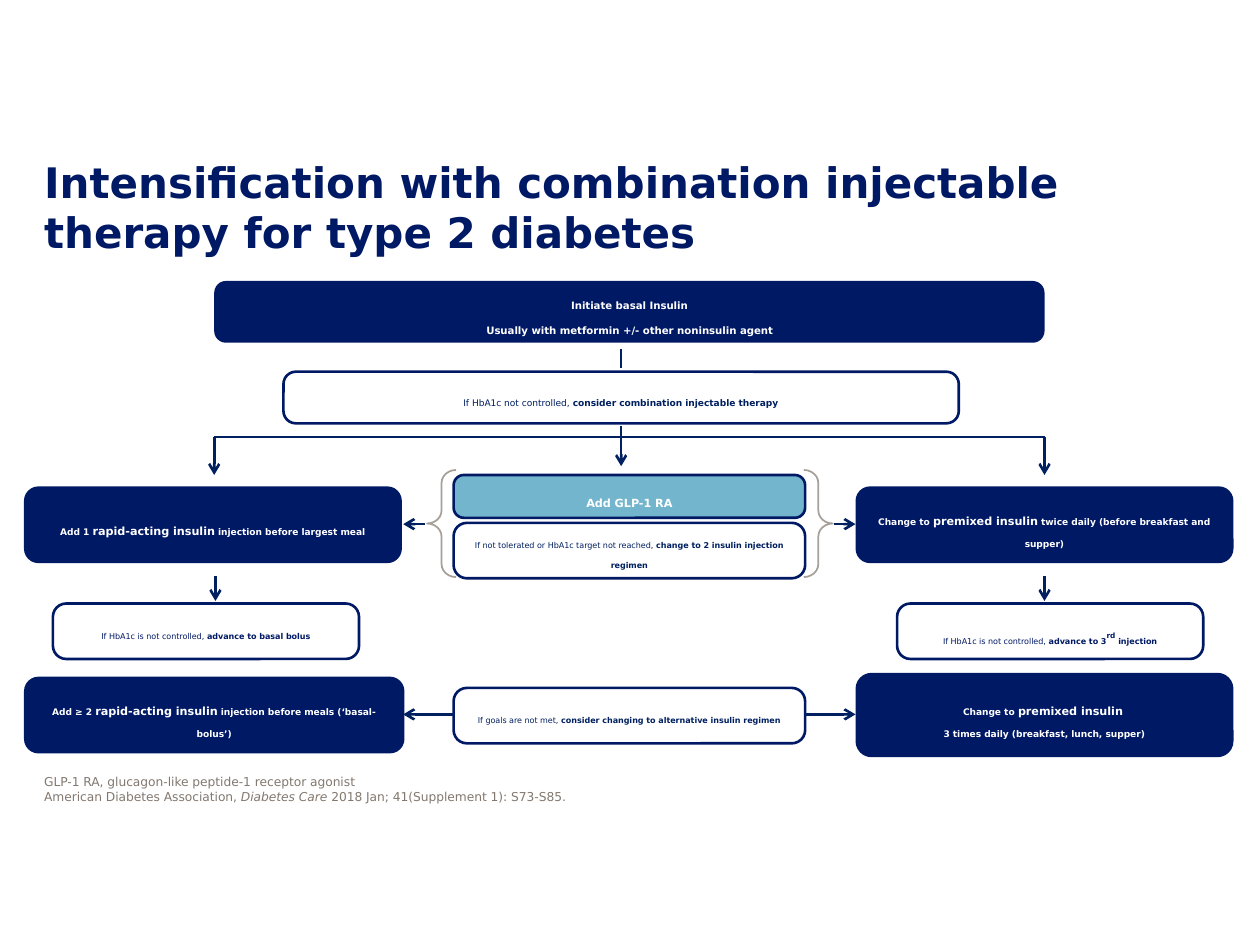
import collections

import pptx
import pptx.util
import pptx.dml.color
import pptx.enum.shapes
import pptx.enum.text
import pptx.oxml.ns
import pptx.oxml.xmlchemy

RGBColor = pptx.dml.color.RGBColor
Shapes = pptx.enum.shapes.MSO_SHAPE
Anchor = pptx.enum.text.MSO_ANCHOR
Align = pptx.enum.text.PP_ALIGN

NAVY = RGBColor(0x00, 0x19, 0x65)
INK = RGBColor(0x00, 0x20, 0x60)
TEAL = RGBColor(0x72, 0xB5, 0xCC)
STONE = RGBColor(0x82, 0x78, 0x6F)
WHITE = RGBColor(0xFF, 0xFF, 0xFF)

FONT = "DejaVu Sans"
NOTE, STEP, HEAD, KEY = 4.6, 5.2, 5.8, 6.4  # text sizes in points
COLUMNS, ROWS = 100, 75
CELL = pptx.util.Inches(10) // COLUMNS

# Left, top, width and height in grid cells
Box = collections.namedtuple("Box", "left top width height")


def cells(count):
    return round(count * CELL)


def place(box):
    return [cells(length) for length in box]


def inside(region, left, top, width, height):
    """Box whose left and top are counted from the region's corner."""
    return Box(region.left + left, region.top + top, width, height)


def add_xml(parent, tag, **attributes):
    child = pptx.oxml.xmlchemy.OxmlElement(tag)
    for name, value in attributes.items():
        child.set(name, value)
    parent.append(child)
    return child


def add_span(para, text, size=STEP, color=INK, bold=False, italic=False, raised=None):
    span = para.add_run()
    span.text = text
    font = span.font
    font.name, font.size, font.bold, font.italic = FONT, pptx.util.Pt(size), bold, italic
    font.color.rgb = color
    if raised:
        span._r.get_or_add_rPr().set("baseline", str(raised * 1000))


def fill_frame(shape, paragraphs, anchor, inset=(0, 0), align=Align.LEFT, spacing=1.0, color=INK):
    """Write paragraphs, each a list of (text, format) spans."""
    frame = shape.text_frame
    frame.word_wrap = True
    frame.vertical_anchor = anchor
    frame.margin_left = frame.margin_right = cells(inset[0])
    frame.margin_top = frame.margin_bottom = cells(inset[1])
    for index, spans in enumerate(paragraphs):
        para = frame.add_paragraph() if index else frame.paragraphs[0]
        para.alignment, para.line_spacing = align, spacing
        for text, style in spans:
            if text == "\v":
                para.add_line_break()
            else:
                add_span(para, text, **{"color": color, **style})


def add_panel(page, box, paragraphs, fill=WHITE, outlined=True, color=INK):
    panel = page.shapes.add_shape(Shapes.ROUNDED_RECTANGLE, *place(box))
    panel.shadow.inherit = False
    panel.adjustments[0] = 0.24 if outlined else 0.19
    panel.fill.solid()
    panel.fill.fore_color.rgb = fill
    if outlined:
        panel.line.color.rgb = NAVY
        panel.line.width = pptx.util.Pt(1.5)
    else:
        panel.line.fill.background()
    fill_frame(panel, paragraphs, Anchor.MIDDLE, (1, 0.5), Align.CENTER, 2.0, color)


def add_step(page, box, paragraphs):
    add_panel(page, box, paragraphs, NAVY, False, WHITE)


def add_note(page, box, plain, *strong, size=NOTE, color=INK):
    spans = [(plain, {"size": size})] + [(text, {"size": size, "bold": True, **style}) for text, style in strong]
    add_panel(page, box, [spans], color=color)


def treatment(before, name, after):
    """Spans of a step that sets the treatment's name larger."""
    return [(before, {"bold": True}), (name, {"size": KEY, "bold": True}), (after, {"bold": True})]


def add_line(page, start, end, arrow=True):
    ends = [cells(length) for length in (*start, *end)]
    line = page.shapes.add_connector(pptx.enum.shapes.MSO_CONNECTOR.STRAIGHT, *ends)
    line.line.color.rgb = INK
    line.line.width = pptx.util.Pt(1.5)
    if arrow:
        add_xml(line.line._get_or_add_ln(), "a:tailEnd", type="arrow")
    add_xml(line._element.spPr, "a:effectLst")


def add_brace(page, box, flipped):
    brace = page.shapes.add_shape(Shapes.RIGHT_BRACE, *place(box))
    brace.shadow.inherit = False
    brace.adjustments[0], brace.adjustments[1] = 0.45, 0.5
    brace.fill.background()
    brace.line.color.rgb = STONE
    brace.line.width = pptx.util.Pt(1)
    color = brace._element.spPr.find(".//" + pptx.oxml.ns.qn("a:srgbClr"))
    add_xml(color, "a:alpha", val="70000")
    if flipped:
        brace._element.spPr.xfrm.set("flipH", "1")


def add_text_box(page, box, spans, anchor):
    fill_frame(page.shapes.add_textbox(*place(box)), [spans], anchor)


def draw_title(page, box):
    text = "Intensification with combination injectable therapy for type 2 diabetes"
    add_text_box(page, box, [(text, {"size": 24, "bold": True, "color": NAVY})], Anchor.TOP)


def draw_references(page, box):
    style = {"size": 7, "color": STONE}
    add_text_box(page, box, [
        ("GLP-1 RA, glucagon-like peptide-1 receptor agonist", style),
        ("\v", {}),
        ("American Diabetes Association, ", style),
        ("Diabetes Care ", {**style, "italic": True}),
        ("2018 Jan; 41(Supplement 1): S73-S85.", style),
    ], Anchor.BOTTOM)


def draw_start(page, box):
    """First treatment, its condition and the fork into three options."""
    strong = {"size": HEAD, "bold": True}
    add_step(page, inside(box, 0, 0, box.width, 4.9), [
        [("Initiate basal Insulin", strong)],
        [("Usually with metformin +/- other noninsulin agent", strong)],
    ])
    add_note(page, inside(box, 5.5, 7.2, 53.6, 4.1), "If HbA1c not controlled, ",
             ("consider combination injectable therapy", {}), size=STEP)
    middle, fork, right = box.left + 32.3, box.top + 12.4, box.left + box.width
    add_line(page, (middle, box.top + 5.4), (middle, box.top + 6.9), arrow=False)
    add_line(page, (middle, box.top + 11.5), (middle, box.top + 14.7))
    add_line(page, (box.left, fork), (right, fork), arrow=False)
    for side in (box.left, right):
        add_line(page, (side, fork), (side, fork + 3))


def draw_branch(page, box, arrow_at, first, note_left, note, last_box, last):
    """Column of a step, a condition and the step that follows."""
    add_step(page, inside(box, 0, 0, box.width, 6.1), first)
    x = box.left + arrow_at
    add_line(page, (x, box.top + 7.1), (x, box.top + 9.1))
    add_note(page, inside(box, note_left, 9.3, 24.3, 4.4), *note, color=NAVY)
    add_step(page, inside(box, *last_box), last)


def draw_middle(page, box):
    """Central option in braces, with arrows to both branches."""
    reach = 2.1
    for left, flipped in ((-reach, True), (box.width - 0.1, False)):
        add_brace(page, inside(box, left, -0.4, 2.3, 8.5), flipped)
    add_panel(page, inside(box, 0, 0, box.width, 3.4),
              [[("Add GLP-1 RA", {"size": KEY, "bold": True})]], TEAL, color=WHITE)
    add_note(page, inside(box, 0, 3.8, box.width, 4.4), "If not tolerated or HbA1c target not reached, ",
             ("change to 2 insulin injection regimen", {}))
    add_note(page, inside(box, 0, 16.9, box.width, 4.4), "If goals are not met, ",
             ("consider changing to alternative insulin regimen", {}))
    right = box.left + box.width
    for y, start in ((box.top + 3.9, reach + 0.2), (box.top + 19, 0)):
        add_line(page, (box.left - start, y), (box.left - 4, y))
        add_line(page, (right + start, y), (right + 4, y))


def main():
    deck = pptx.Presentation()
    deck.slide_width, deck.slide_height = cells(COLUMNS), cells(ROWS)
    page = deck.slides.add_slide(deck.slide_layouts[6])
    draw_title(page, Box(3.5, 12.4, 93.1, 4.3))
    draw_start(page, Box(17, 22.3, 65.9, 15.5))
    draw_branch(
        page, Box(1.9, 38.6, 30, 21.2), 15.2,
        [treatment("Add 1 ", "rapid-acting insulin", " injection before largest meal")],
        2.3, ["If HbA1c is not controlled, ", ("advance to basal bolus", {})],
        (0, 15.1, 30.2, 6.1),
        [treatment("Add ≥ 2 ", "rapid-acting insulin", " injection before meals (‘basal-bolus’)")])
    draw_branch(
        page, Box(67.9, 38.6, 30, 21.5), 15,
        [treatment("Change to ", "premixed insulin", " twice daily (before breakfast and supper)")],
        3.3, ["If HbA1c is not controlled, ", ("advance to 3", {}),
              ("rd", {"raised": 50, "size": 7.2}), (" injection", {})],
        (0, 14.8, 30, 6.7),
        [treatment("Change to ", "premixed insulin", " "),
         [("3 times daily (breakfast, lunch, supper)", {"bold": True})]])
    draw_middle(page, Box(36, 37.7, 27.9, 21.3))
    draw_references(page, Box(3.5, 61.9, 93.2, 1.9))
    deck.save("out.pptx")


if __name__ == "__main__":
    main()
